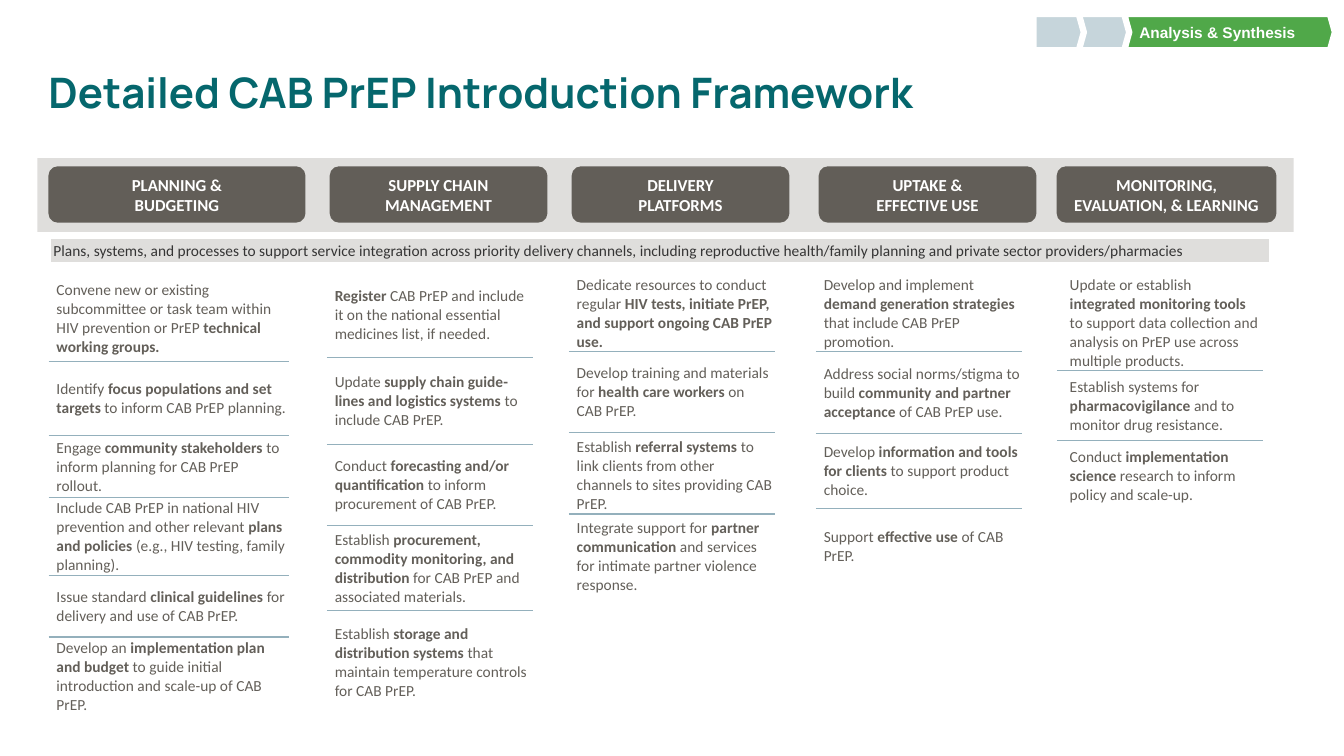
from lxml import etree
from pptx import Presentation
from pptx.dml.color import RGBColor
from pptx.enum.shapes import MSO_SHAPE as Preset
from pptx.enum.text import MSO_ANCHOR as Anchor, PP_ALIGN as Align
from pptx.oxml.ns import qn
from pptx.util import Inches, Pt

WHITE, PALE_GREY, DARK_GREY = "FFFFFF", "DFDEDC", "625E58"
BODY_GREY, RULE_BLUE = "635F59", "94B0BC"
TEAL, GREEN, PALE_BLUE = "05676D", "50A849", "C6D5DB"

# Header left, header text, header width, table left, table top, table width,
# left inset, then (row height, top inset, text); ** surrounds bold words.
COLUMNS = [
    (0.48, "PLANNING &\nBUDGETING", 2.55, 0.51, 2.72, 2.35, 0.05, [
        (0.87, 0.01, "Convene new or existing subcommittee or task team within HIV prevention or PrEP **technical working groups.**"),
        (0.73, 0.01, "Identify **focus populations and set targets **to inform CAB PrEP planning."),
        (0.62, 0.01, "Engage **community stakeholders **to inform planning for CAB PrEP rollout."),
        (0.77, 0.01, "Include CAB PrEP in national HIV prevention and other relevant **plans and policies **(e.g., HIV testing, family planning)."),
        (0.61, 0.01, "Issue standard** clinical guidelines **for delivery and use of CAB PrEP."),
        (0.77, 0.01, "Develop an** implementation plan and budget **to guide initial introduction and scale-up of CAB PrEP."),
    ]),
    (3.27, "SUPPLY CHAIN MANAGEMENT", 2.16, 3.27, 2.7, 2.01, 0.05, [
        (0.85, 0.01, "**Register** CAB PrEP and include it on the national essential medicines list, if needed."),
        (0.86, 0.01, "Update **supply chain guide-lines and logistics systems **to include CAB PrEP."),
        (0.8, 0.01, "Conduct **forecasting and/or quantification **to inform procurement of CAB PrEP."),
        (0.85, 0.01, "Establish **procurement, commodity monitoring, and distribution **for CAB PrEP and associated materials."),
        (1.02, 0.01, "Establish **storage and distribution systems **that maintain temperature controls for CAB PrEP."),
    ]),
    (5.67, "DELIVERY\nPLATFORMS", 2.16, 5.67, 2.72, 2.01, 0.05, [
        (0.75, 0.01, "Dedicate resources to conduct regular **HIV tests, initiate PrEP, and support ongoing CAB PrEP use.**"),
        (0.81, 0.01, "Develop training and materials for **health care workers **on CAB PrEP."),
        (0.75, 0.05, "Establish **referral systems **to link clients from other channels to sites providing CAB PrEP."),
        (0.71, 0.05, "Integrate support for **partner communication** and services for intimate partner violence response."),
    ]),
    (8.12, "UPTAKE &\nEFFECTIVE USE", 2.16, 8.12, 2.72, 2.01, 0.05, [
        (0.76, 0.01, "Develop and implement **demand generation strategies **that include CAB PrEP promotion."),
        (0.82, 0.01, "Address social norms/stigma to build **community and partner acceptance** of CAB PrEP use."),
        (0.74, 0.01, "Develop **information and tools for clients **to support product choice."),
        (0.74, 0.01, "Support **effective use **of CAB PrEP."),
    ]),
    (10.48, "MONITORING, EVALUATION, & LEARNING", 2.18, 10.51, 2.72, 2.01, 0.1, [
        (0.93, 0.01, "Update or establish** integrated monitoring tools** to support data collection and analysis on PrEP use across multiple products."),
        (0.7, 0.01, "Establish systems for **pharmacovigilance** and to monitor drug resistance."),
        (0.7, 0.01, "Conduct **implementation science **research to inform policy and scale-up."),
    ]),
]
SERVICE_STRIP = [(0.24, 0.01, "Plans, systems, and processes to support service integration across priority delivery channels, including reproductive health/family planning and private sector providers/pharmacies")]


def color(hex_string):
    return RGBColor.from_string(hex_string)


def style_font(font, size, hex_string, name="Calibri", bold=False):
    values = {"size": Pt(size), "name": name, "bold": bold}
    for key, value in values.items():
        setattr(font, key, value)
    font.color.rgb = color(hex_string)


presentation = Presentation()
presentation.slide_width, presentation.slide_height = Inches(13.33), Inches(7.5)
slide = presentation.slides.add_slide(presentation.slide_layouts[5])
shapes = slide.shapes

title = shapes.title
title.left, title.top = Inches(0), Inches(0.32)
title.width, title.height = Inches(12.66), Inches(1.25)
title.text_frame.text = "Detailed CAB PrEP Introduction Framework"
title.text_frame.margin_left = Inches(0.48)
title.text_frame.vertical_anchor = Anchor.MIDDLE
heading = title.text_frame.paragraphs[0]
heading.alignment, heading.line_spacing = Align.LEFT, 0.9
style_font(heading.runs[0].font, 30, TEAL, "Manrope", True)

# Header band, column headers and progress chevrons:
# preset, box, adjustment, fill, outline, text, size, font, alignment, left inset
boxes = [(Preset.RECTANGLE, (0.37, 1.57, 12.46, 0.73), None, PALE_GREY, None,
          "", 12, "Calibri", Align.CENTER, 0.1)]
for left, header, width, *_ in COLUMNS:
    boxes.append((Preset.ROUNDED_RECTANGLE, (left, 1.65, width, 0.56), 0.167, DARK_GREY,
                  None, header, 12, "Calibri", Align.CENTER, 0.1))
for left, width, fill, text in [(11.16, 2.08, GREEN, "Analysis & Synthesis"),
                                (10.7, 0.5, PALE_BLUE, ""), (10.25, 0.5, PALE_BLUE, "")]:
    boxes.append((Preset.PENTAGON, (left, 0.14, width, 0.36), 0.138, fill,
                  WHITE, text, 11, "Arial", Align.LEFT, 0.14))

for preset, box, adjustment, fill, outline, text, size, font, alignment, inset in boxes:
    shape = shapes.add_shape(preset, *map(Inches, box))
    shape.shadow.inherit = False
    shape.fill.solid()
    shape.fill.fore_color.rgb = color(fill)
    if adjustment:
        shape.adjustments[0] = adjustment
    if outline:
        shape.line.color.rgb = color(outline)
        shape.line.width = Pt(4.5)
    else:
        shape.line.fill.background()
    if text:
        frame = shape.text_frame
        frame.text = text
        frame.word_wrap = True
        frame.margin_left = Inches(inset)
        frame.vertical_anchor = Anchor.MIDDLE
        for paragraph in frame.paragraphs:
            paragraph.alignment = alignment
            style_font(paragraph.runs[0].font, size, WHITE, font, True)

# One single-column table per framework column, plus the strip across all of them
tables = [(*column[3:], None, BODY_GREY) for column in COLUMNS]
tables.append((0.48, 2.37, 12.11, 0.05, SERVICE_STRIP, PALE_GREY, "353535"))

for left, top, width, inset, rows, fill, text_color in tables:
    height = sum(row[0] for row in rows)
    table = shapes.add_table(len(rows), 1, *map(Inches, (left, top, width, height))).table
    table.first_row = table.horz_banding = False
    for index, (row_height, top_inset, text) in enumerate(rows):
        table.rows[index].height = Inches(row_height)
        cell = table.cell(index, 0)
        margins = {"left": inset, "top": top_inset, "right": 0.01, "bottom": 0}
        for side, margin in margins.items():
            setattr(cell, f"margin_{side}", Inches(margin))
        cell.vertical_anchor = Anchor.MIDDLE

        borders = {"lnL": (WHITE, 4.5)}
        if index > 0:
            borders["lnT"] = (RULE_BLUE, 1)
        if index < len(rows) - 1:
            borders["lnB"] = (RULE_BLUE, 1)
        properties = cell._tc.get_or_add_tcPr()
        for tag, (border_color, points) in borders.items():
            line = etree.SubElement(properties, qn(f"a:{tag}"), w=str(Pt(points)))
            solid = etree.SubElement(line, qn("a:solidFill"))
            etree.SubElement(solid, qn("a:srgbClr"), val=border_color)

        if fill:
            cell.fill.solid()
            cell.fill.fore_color.rgb = color(fill)
        else:
            cell.fill.background()

        paragraph = cell.text_frame.paragraphs[0]
        for part, words in enumerate(text.split("**")):
            if words:
                run = paragraph.add_run()
                run.text = words
                style_font(run.font, 11, text_color, bold=part % 2 == 1)

presentation.save("out.pptx")
